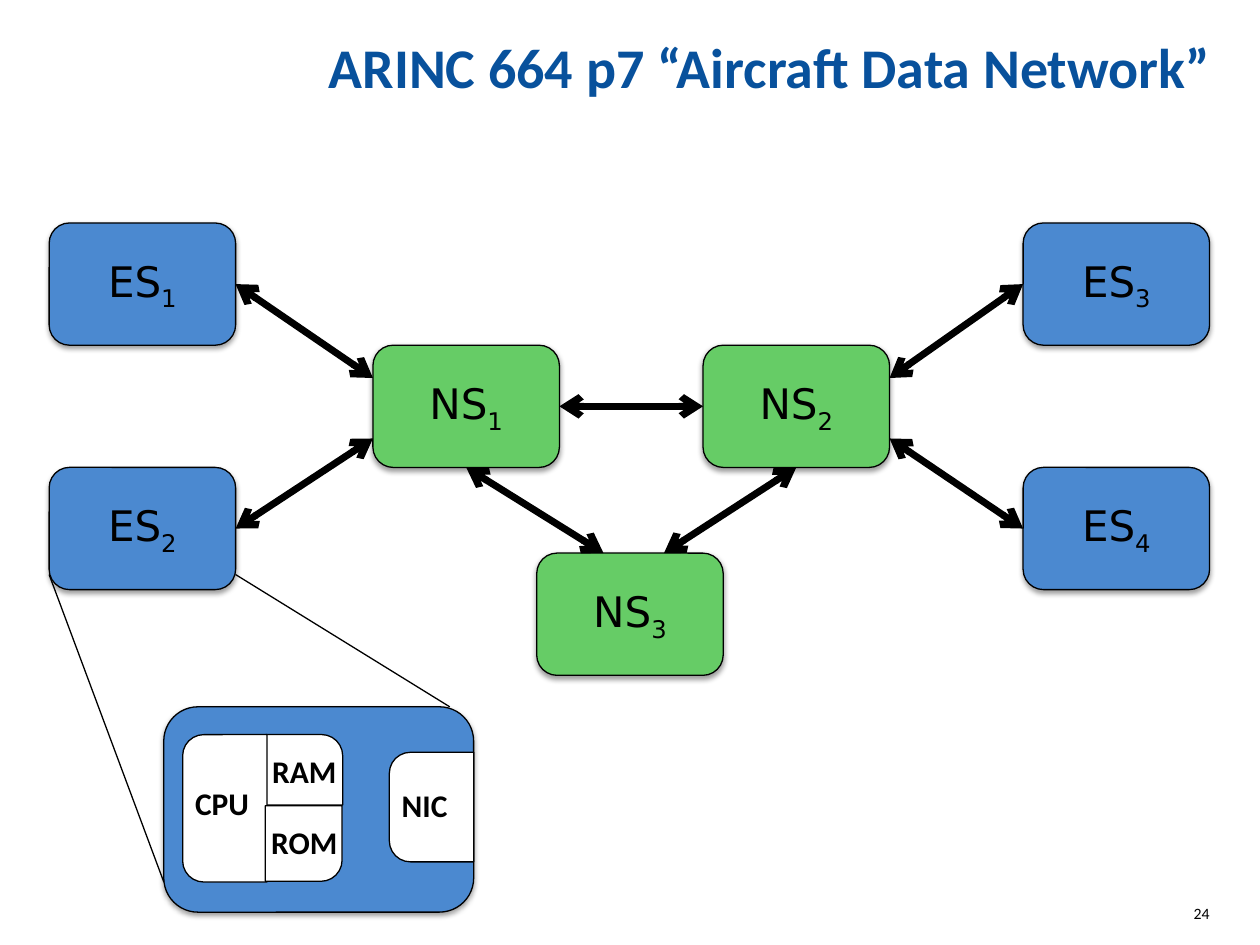
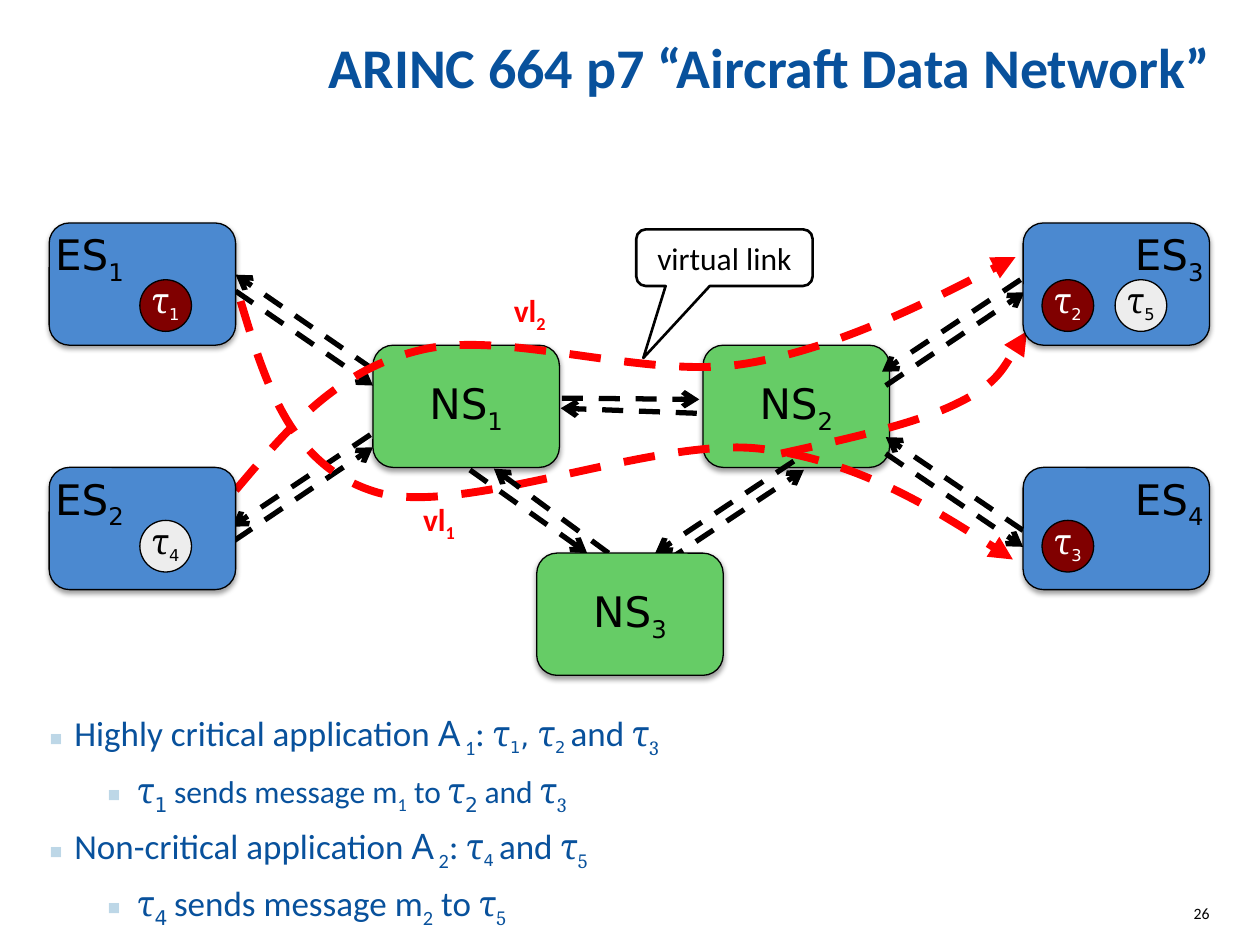
from lxml import etree
from pptx import Presentation
from pptx.dml.color import RGBColor
from pptx.enum.dml import MSO_LINE
from pptx.enum.shapes import MSO_CONNECTOR, MSO_SHAPE
from pptx.enum.text import MSO_ANCHOR, MSO_AUTO_SIZE, PP_ALIGN
from pptx.oxml.ns import qn
from pptx.util import Inches, Pt

ROUND = MSO_SHAPE.ROUNDED_RECTANGLE
ONE_ROUND = MSO_SHAPE.ROUND_1_RECTANGLE
TWO_ROUND = MSO_SHAPE.ROUND_2_SAME_RECTANGLE
OVAL = MSO_SHAPE.OVAL
CALLOUT = MSO_SHAPE.ROUNDED_RECTANGULAR_CALLOUT
STRAIGHT = MSO_CONNECTOR.STRAIGHT
DASH = MSO_LINE.DASH
NO_FIT = MSO_AUTO_SIZE.NONE
TOP, MIDDLE, BOTTOM = MSO_ANCHOR.TOP, MSO_ANCHOR.MIDDLE, MSO_ANCHOR.BOTTOM
LEFT, CENTER, RIGHT = PP_ALIGN.LEFT, PP_ALIGN.CENTER, PP_ALIGN.RIGHT

COLORS = {
    "navy": "08519C", "blue": "4B89D0", "green": "66CC66", "pale": "BDD7E7",
    "red": "FF0000", "maroon": "800000", "gray": "EDEDED",
    "black": "000000", "white": "FFFFFF",
}
SANS, SERIF, WIDE, NOTO = "Calibri", "Cambria", "DejaVu Sans", "Noto Sans"
TITLE = "ARINC 664 p7 “Aircraft Data Network”"
NODE_W, NODE_H = 1.48, 0.97
NODES = {
    "ES1": (0.39, 1.77), "ES2": (0.39, 3.71),
    "ES3": (8.12, 1.77), "ES4": (8.12, 3.71),
    "NS1": (2.96, 2.74), "NS2": (5.58, 2.74), "NS3": (4.26, 4.39),
}
LINKS = [
    ("ES1", 3, (2.96, 3)), ("ES2", 3, (2.96, 3.48)),
    ("ES3", 1, (7.06, 3)), ("ES4", 1, (7.06, 3.48)),
    ("NS1", 2, (4.79, 4.39)), ("NS2", 2, (5.27, 4.39)),
]
WIRES = [
    (1.87, 2.31, 2.96, 3.06), (2.96, 2.93, 1.87, 2.18),
    (1.86, 4.29, 2.96, 3.55), (2.94, 3.45, 1.84, 4.18),
    (7.03, 3.6, 8.12, 4.34), (8.12, 4.21, 7.03, 3.47),
    (7.03, 3.06, 8.13, 2.32), (8.1, 2.22, 7, 2.95),
    (4.46, 3.16, 5.55, 3.17), (5.53, 3.28, 4.45, 3.24),
]
LOW_WIRES = [
    (5.28, 4.46, 6.38, 3.73), (6.3, 3.66, 5.2, 4.39),
    (3.73, 3.73, 4.66, 4.39), (4.83, 4.39, 3.92, 3.72),
]
CURVES = [
    [(1.87, 3.89), (2.27, 3.42), (2.66, 2.94), (3.33, 2.78), (4, 2.61),
     (5.1, 3.01), (5.89, 2.89), (6.68, 2.77), (8.06, 2.04), (8.06, 2.04)],
    [(6.2, 3.6), (6.74, 3.48), (7.28, 3.36), (7.6, 3.2),
     (7.93, 3.04), (8.15, 2.63), (8.15, 2.63)],
    [(1.91, 2.39), (2.11, 3.05), (2.31, 3.71), (3, 3.91), (3.69, 4.1),
     (5.18, 3.47), (6.02, 3.56), (6.86, 3.65), (8.04, 4.44), (8.04, 4.44)],
]
TASKS = {
    "ES1": [("1", 0.72, 0.45, "maroon")],
    "ES2": [("4", 0.72, 0.42, "gray")],
    "ES3": [("2", 0.15, 0.45, "maroon"), ("5", 0.73, 0.45, "gray")],
    "ES4": [("3", 0.15, 0.42, "maroon")],
}
STYLES = {
    "text": dict(font=SANS), "sub": dict(font=SANS, sub=True),
    "small": dict(font=SANS, size=18),
    "small sub": dict(font=SANS, size=18, sub=True),
    "noto": dict(font=NOTO), "tau": dict(font=SERIF),
    "tau sub": dict(font=SERIF, sub=True),
    "wide": dict(font=WIDE, size=16),
    "wide sub": dict(font=WIDE, size=16, sub=True),
    "big sub": dict(font=WIDE, sub=True),
}
TAU = ("τ", "tau")
POINTS = [
    (0, [("Highly critical application ", "text"), ("A", "noto"),
         (" 1", "sub"), (": ", "text"), TAU, ("1", "wide sub"),
         (", ", "wide"), TAU, ("2 ", "wide sub"), ("and ", "text"),
         TAU, ("3", "tau sub")]),
    (1, [TAU, ("1 ", "big sub"), ("sends message m", "small"),
         ("1", "small sub"), (" to ", "small"), TAU, ("2 ", "big sub"),
         ("and ", "small"), TAU, ("3", "tau sub")]),
    (0, [("Non-critical application ", "text"), ("A", "noto"),
         (" 2", "sub"), (": ", "text"), TAU, ("4 ", "wide sub"),
         ("and ", "text"), TAU, ("5", "tau sub")]),
    (1, [TAU, ("4 ", "big sub"), ("sends message m", "text"),
         ("2", "sub"), (" to ", "text"), TAU, ("5", "tau sub")]),
]


def color(name):
    return RGBColor.from_string(COLORS[name])


def inches(*sizes):
    return [Inches(size) for size in sizes]


def write(par, text, font=SANS, size=20, hue="black", bold=False, sub=False):
    run = par.add_run()
    run.text = text
    run.font.name, run.font.size = font, Pt(size)
    run.font.bold = bold
    run.font.color.rgb = color(hue)
    if sub:
        run.font._element.set("baseline", "-25000")


def frame(shape, align=LEFT, anchor=TOP, pad=0):
    body = shape.text_frame
    body.word_wrap = True
    body.auto_size = NO_FIT
    body.vertical_anchor = anchor
    body.margin_left = body.margin_right = Inches(pad)
    body.margin_top = body.margin_bottom = Inches(pad / 2)
    body.paragraphs[0].alignment = align
    return body.paragraphs[0]


def label(slide, box, text, sub="", align=LEFT, anchor=TOP, pad=0.1, **style):
    par = frame(slide.shapes.add_textbox(*inches(*box)), align, anchor, pad)
    write(par, text, **style)
    if sub:
        write(par, sub, sub=True, **style)


def stroke(line, hue="black", width=0.75, dash=None, head=None, tail=None):
    line.color.rgb = color(hue)
    line.width = Pt(width)
    if dash:
        line.dash_style = dash
    for tag, kind in (("a:headEnd", head), ("a:tailEnd", tail)):
        if kind:
            etree.SubElement(line._get_or_add_ln(), qn(tag), type=kind)


def block(slide, kind, box, fill=None, width=0.75, turn=0, bends=(),
          shadow=False):
    shape = slide.shapes.add_shape(kind, *inches(*box))
    for spot, bend in enumerate(bends):
        shape.adjustments[spot] = bend
    shape.rotation = turn
    if fill:
        shape.fill.solid()
        shape.fill.fore_color.rgb = color(fill)
    else:
        shape.fill.background()
    stroke(shape.line, width=width)
    shape.shadow.inherit = False
    if shadow:
        effects = shape._element.spPr.find(qn("a:effectLst"))
        outer = etree.SubElement(
            effects, qn("a:outerShdw"), blurRad=str(Pt(3.1)),
            dist=str(Pt(1.6)), dir="5400000", rotWithShape="0")
        shade = etree.SubElement(outer, qn("a:srgbClr"), val=COLORS["black"])
        etree.SubElement(shade, qn("a:alpha"), val="38000")
    return shape


def wire(slide, ends, **style):
    line = slide.shapes.add_connector(STRAIGHT, *inches(*ends))
    stroke(line.line, **style)
    etree.SubElement(line._element.spPr, qn("a:effectLst"))
    return line


def curve(slide, points):
    spots = [inches(*point) for point in points]
    pen = slide.shapes.build_freeform(*spots[0], scale=1.0)
    pen.add_line_segments(spots[1:], close=False)
    shape = pen.convert_to_shape()
    trace = next(shape._element.iter(qn("a:path")))
    steps = trace.findall(qn("a:lnTo"))
    for first in range(0, len(steps), 3):
        bend = etree.SubElement(trace, qn("a:cubicBezTo"))
        for step in steps[first:first + 3]:
            bend.append(step[0])
            trace.remove(step)
    shape.fill.background()
    shape.shadow.inherit = False
    stroke(shape.line, "red", 4.5, DASH, tail="triangle")


def node(slide, name, align=CENTER, anchor=MIDDLE):
    fill = "blue" if name.startswith("ES") else "green"
    shape = block(slide, ROUND, (*NODES[name], NODE_W, NODE_H), fill,
                  shadow=True)
    par = frame(shape, align, anchor)
    write(par, name[:2], WIDE, 24)
    write(par, name[2], WIDE, 24, sub=True)
    return shape


def station(slide, name):
    left, top = NODES[name]
    node(slide, name, LEFT if left < 5 else RIGHT, TOP)
    for digit, x, y, fill in TASKS[name]:
        disc = block(slide, OVAL, (left + x, top + y, 0.41, 0.41), fill)
        hue = "white" if fill == "maroon" else "black"
        par = frame(disc, CENTER, BOTTOM)
        write(par, "τ", SERIF, 20, hue)
        write(par, digit, WIDE, 16, hue, sub=True)


def device(slide, x, y):
    block(slide, ROUND, (x, y, 2.46, 1.63), "blue", shadow=True)
    wire(slide, (0.39, 4.56, x, y + 1.39))
    wire(slide, (1.87, 4.56, x + 2.27, y))
    for kind, box, turn, bends in (
        (ONE_ROUND, (0.81, 0.22, 0.61, 0.56), 0, [0.3]),
        (TWO_ROUND, (-0.1, 0.47, 1.17, 0.67), 270, [0.25, 0]),
        (ONE_ROUND, (0.81, 0.78, 0.6, 0.61), 90, [0.28]),
        (TWO_ROUND, (1.69, 0.46, 0.87, 0.67), 270, [0.25, 0]),
    ):
        place = (x + box[0], y + box[1], *box[2:])
        block(slide, kind, place, "white", turn=turn, bends=bends)
    for text, dx, dy in (("CPU", 0.15, 0.56), ("NIC", 1.79, 0.58)):
        label(slide, (x + dx, y + dy, 0.67, 0.4), text, size=18, bold=True)
    for text, dy in (("RAM", 0.36), ("ROM", 0.92)):
        label(slide, (x + 0.81, y + dy, 0.61, 0.3), text, align=CENTER,
              anchor=MIDDLE, pad=0, size=18, bold=True)


def move(shape, box):
    shape.left, shape.top, shape.width, shape.height = inches(*box)


def start(deck, layout, number):
    slide = deck.slides.add_slide(deck.slide_layouts[layout])
    title = slide.shapes.title
    move(title, (0.39, 0, 9.22, 0.79))
    par = frame(title, RIGHT, BOTTOM)
    par.line_spacing = 0.8
    write(par, TITLE, size=32, hue="navy", bold=True)
    label(slide, (9.27, 7.17, 0.33, 0.33), number, align=RIGHT, pad=0, size=9)
    return slide


def bullets(shape, box):
    move(shape, box)
    par = frame(shape)
    for row, (level, runs) in enumerate(POINTS):
        if row:
            par = shape.text_frame.add_paragraph()
        par.level = level
        props = par._p.get_or_add_pPr()
        props.set("marL", str(Inches(0.2 + 0.5 * level)))
        props.set("indent", str(Inches(-0.24)))
        tint = etree.SubElement(props, qn("a:buClr"))
        etree.SubElement(tint, qn("a:srgbClr"), val=COLORS["pale"])
        etree.SubElement(props, qn("a:buFont"), typeface=NOTO)
        etree.SubElement(props, qn("a:buChar"), char="▪")
        par.alignment = LEFT
        par.space_before = Pt(5 if row else 0)
        for text, style in runs:
            write(par, text, hue="navy", **STYLES[style])


def network(deck):
    slide = start(deck, 5, "24")
    nodes = {name: node(slide, name) for name in NODES}
    both = dict(width=4, head="arrow", tail="arrow")
    for name, side, end in LINKS:
        line = wire(slide, (*NODES[name], *end), **both)
        line.begin_connect(nodes[name], side)
    trunk = wire(slide, (4.44, 3.22, 5.58, 3.22), **both)
    trunk.begin_connect(nodes["NS1"], 3)
    trunk.end_connect(nodes["NS2"], 1)
    device(slide, 1.3, 5.61)


def traffic(deck):
    slide = start(deck, 1, "26")
    node(slide, "NS1")
    node(slide, "NS2")
    dashed = dict(width=3, dash=DASH, tail="arrow")
    for ends in WIRES:
        wire(slide, ends, **dashed)
    for points in CURVES:
        curve(slide, points)
    for digit, x, y in (("2", 3.98, 2.26), ("1", 3.26, 3.92)):
        label(slide, (x, y, 0.53, 0.4), "vl", digit, size=18, hue="red",
              bold=True)
    for name in TASKS:
        station(slide, name)
    bullets(slide.placeholders[1], (0.39, 5.65, 6.67, 0.7))
    note = block(slide, CALLOUT, (5.05, 1.82, 1.4, 0.45), width=1.5,
                 bends=[-0.46, 1.77, 0.17])
    write(frame(note, CENTER, MIDDLE), "virtual link", size=18)
    for ends in LOW_WIRES:
        wire(slide, ends, **dashed)
    node(slide, "NS3")


def main():
    deck = Presentation()
    deck.slide_width, deck.slide_height = inches(10, 7.5)
    network(deck)
    traffic(deck)
    deck.save("out.pptx")


if __name__ == "__main__":
    main()
